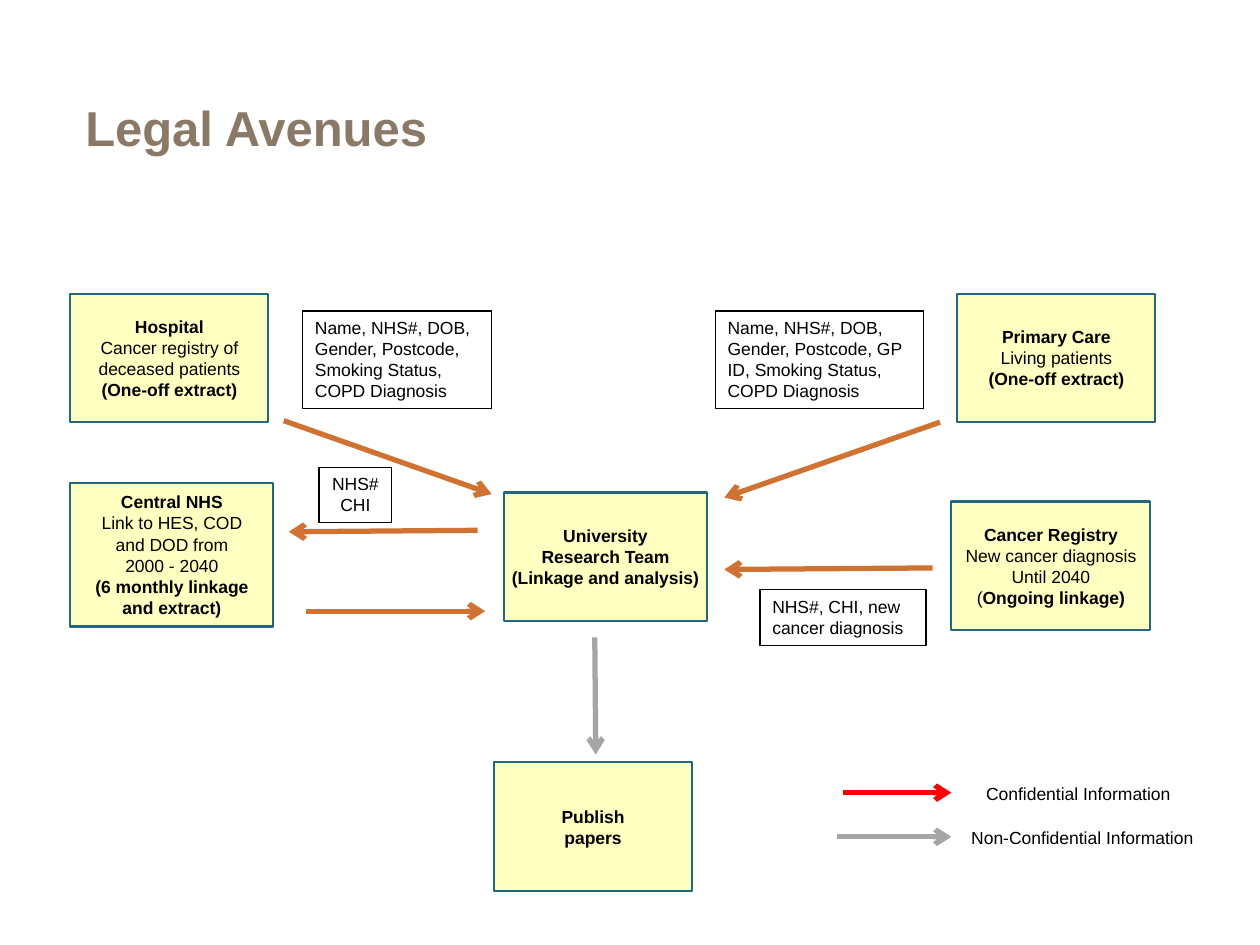
from typing import NamedTuple

from lxml import etree
from pptx import Presentation
from pptx import util as u
from pptx.dml.color import RGBColor
from pptx.enum import shapes, text
from pptx.oxml.ns import qn

YELLOW = RGBColor(0xFF, 0xFF, 0x66)
TEAL = RGBColor(0x21, 0x67, 0x7E)
ORANGE = RGBColor(0xD0, 0x72, 0x32)
GREY = RGBColor(0xA6, 0xA6, 0xA6)
RED = RGBColor(0xFF, 0x00, 0x00)
BROWN = RGBColor(0x8A, 0x79, 0x67)
BLACK = RGBColor(0, 0, 0)
WHITE = RGBColor(0xFF, 0xFF, 0xFF)

CENTER = text.PP_ALIGN.CENTER
LEFT = text.PP_ALIGN.LEFT
STRAIGHT = shapes.MSO_CONNECTOR.STRAIGHT
ELBOW = shapes.MSO_CONNECTOR.ELBOW


class Span(NamedTuple):
    words: str
    bold: bool = False


class Area(NamedTuple):
    left: float
    top: float
    width: float
    height: float


class Party(NamedTuple):
    area: Area
    paragraphs: list[list[Span]]


class Note(NamedTuple):
    area: Area
    words: str
    filled: bool = False
    align: text.PP_ALIGN = LEFT


class Label(NamedTuple):
    area: Area
    words: str
    size: int = 10
    color: RGBColor = BLACK
    bold: bool = False


class Arrow(NamedTuple):
    start: tuple[float, float]
    end: tuple[float, float]
    color: RGBColor = ORANGE
    kind: shapes.MSO_CONNECTOR = STRAIGHT


# Organisations and outputs (lengths in cm)
PARTIES = [
    Party(Area(19.3, 5.92, 3.99, 2.59), [
        [Span("Primary Care", True)],
        [Span("Living patients\n"), Span("(One-off extract)", True)]]),
    Party(Area(10.16, 9.93, 4.09, 2.59), [
        [Span("University\nResearch Team\n(Linkage and analysis)", True)]]),
    Party(Area(1.42, 5.92, 3.99, 2.59), [
        [Span("Hospital\n", True), Span("Cancer registry of")],
        [Span("deceased patients\n"), Span("(One-off extract)", True)]]),
    Party(Area(19.18, 10.11, 4.01, 2.59), [
        [Span("Cancer Registry", True)],
        [Span("New cancer diagnosis")],
        [Span("Until 2040\n("), Span("Ongoing linkage)", True)]]),
    Party(Area(1.42, 9.73, 4.09, 2.9), [
        [Span("Central NHS\n", True), Span("Link to HES, COD")],
        [Span("and DOD from")],
        [Span("2000 - 2040\n"), Span("(6 monthly linkage\nand extract)", True)]]),
    Party(Area(9.96, 15.37, 3.99, 2.59), [[Span("Publish\npapers", True)]]),
]

# Data items sent along the arrows
NOTES = [
    Note(Area(14.42, 6.27, 4.2, 1.96),
         "Name, NHS#, DOB, Gender, Postcode, GP ID, Smoking Status, COPD Diagnosis"),
    Note(Area(6.1, 6.27, 3.81, 1.96),
         "Name, NHS#, DOB, Gender, Postcode, Smoking Status, COPD Diagnosis"),
    Note(Area(15.32, 11.89, 3.35, 1.12), "NHS#, CHI, new cancer diagnosis", True),
    Note(Area(6.43, 9.42, 1.47, 1.12), "NHS# CHI", True, CENTER),
]

ARROWS = [
    Arrow((18.95, 8.51), (14.6, 10.03)),
    Arrow((5.72, 8.48), (9.91, 9.96)),
    Arrow((9.63, 10.69), (5.82, 10.72)),
    Arrow((18.8, 11.45), (14.6, 11.48)),
    Arrow((6.17, 12.32), (9.78, 12.32)),
    Arrow((11.99, 12.85), (12.01, 15.21), GREY),
    # Legend
    Arrow((16.99, 15.98), (19.18, 15.98), RED, ELBOW),
    Arrow((16.87, 16.87), (19.18, 16.87), GREY, ELBOW),
]

LABELS = [
    Label(Area(1.47, 1.85, 7.49, 1.45), "Legal Avenues", 28, BROWN, True),
    Label(Area(19.63, 15.67, 4.24, 0.69), "Confidential Information"),
    Label(Area(19.33, 16.54, 5.03, 0.69), "Non-Confidential Information"),
]


def place(area: Area) -> list[u.Length]:
    return [u.Cm(length) for length in area]


def style(para, size: int = 10, color: RGBColor = BLACK, align=LEFT) -> None:
    para.alignment = align
    para.font.name = "Arial"
    para.font.size = u.Pt(size)
    para.font.color.rgb = color


def add_rectangle(page, area: Area, line_color: RGBColor, line_width: float):
    box = page.shapes.add_shape(shapes.MSO_SHAPE.RECTANGLE, *place(area))
    box.shadow.inherit = False
    box.line.color.rgb = line_color
    box.line.width = u.Pt(line_width)
    return box


def add_party(page, party: Party) -> None:
    box = add_rectangle(page, party.area, TEAL, 1.25)
    box.fill.solid()
    box.fill.fore_color.rgb = YELLOW
    tint = box.fill._xPr.find(qn("a:solidFill"))[0]
    etree.SubElement(tint, qn("a:alpha")).set("val", "40000")

    frame = box.text_frame
    frame.word_wrap = False
    frame.vertical_anchor = text.MSO_ANCHOR.MIDDLE
    for index, spans in enumerate(party.paragraphs):
        para = frame.add_paragraph() if index else frame.paragraphs[0]
        style(para, align=CENTER)
        for span in spans:
            for number, line in enumerate(span.words.split("\n")):
                if number:
                    para.add_line_break()
                if line:
                    run = para.add_run()
                    run.text = line
                    run.font.bold = span.bold


def add_note(page, note: Note) -> None:
    box = add_rectangle(page, note.area, BLACK, 0.75)
    if note.filled:
        box.fill.solid()
        box.fill.fore_color.rgb = WHITE
    else:
        box.fill.background()
    frame = box.text_frame
    frame.word_wrap = True
    frame.vertical_anchor = text.MSO_ANCHOR.TOP
    frame.text = note.words
    style(frame.paragraphs[0], align=note.align)


def add_label(page, label: Label) -> None:
    frame = page.shapes.add_textbox(*place(label.area)).text_frame
    frame.word_wrap = False
    frame.text = label.words
    para = frame.paragraphs[0]
    style(para, label.size, label.color)
    para.font.bold = label.bold


def add_arrow(page, arrow: Arrow) -> None:
    ends = [u.Cm(length) for length in arrow.start + arrow.end]
    connector = page.shapes.add_connector(arrow.kind, *ends)
    connector.line.color.rgb = arrow.color
    connector.line.width = u.Pt(3)
    line = connector.line._get_or_add_ln()
    etree.SubElement(line, qn("a:tailEnd")).set("type", "arrow")
    etree.SubElement(connector._element.spPr, qn("a:effectLst"))


def main() -> None:
    deck = Presentation()
    deck.slide_width, deck.slide_height = u.Cm(25.4), u.Cm(19.05)
    page = deck.slides.add_slide(deck.slide_layouts[6])
    for items, draw in ((PARTIES, add_party), (ARROWS, add_arrow),
                        (NOTES, add_note), (LABELS, add_label)):
        for item in items:
            draw(page, item)
    deck.save("out.pptx")


if __name__ == "__main__":
    main()
